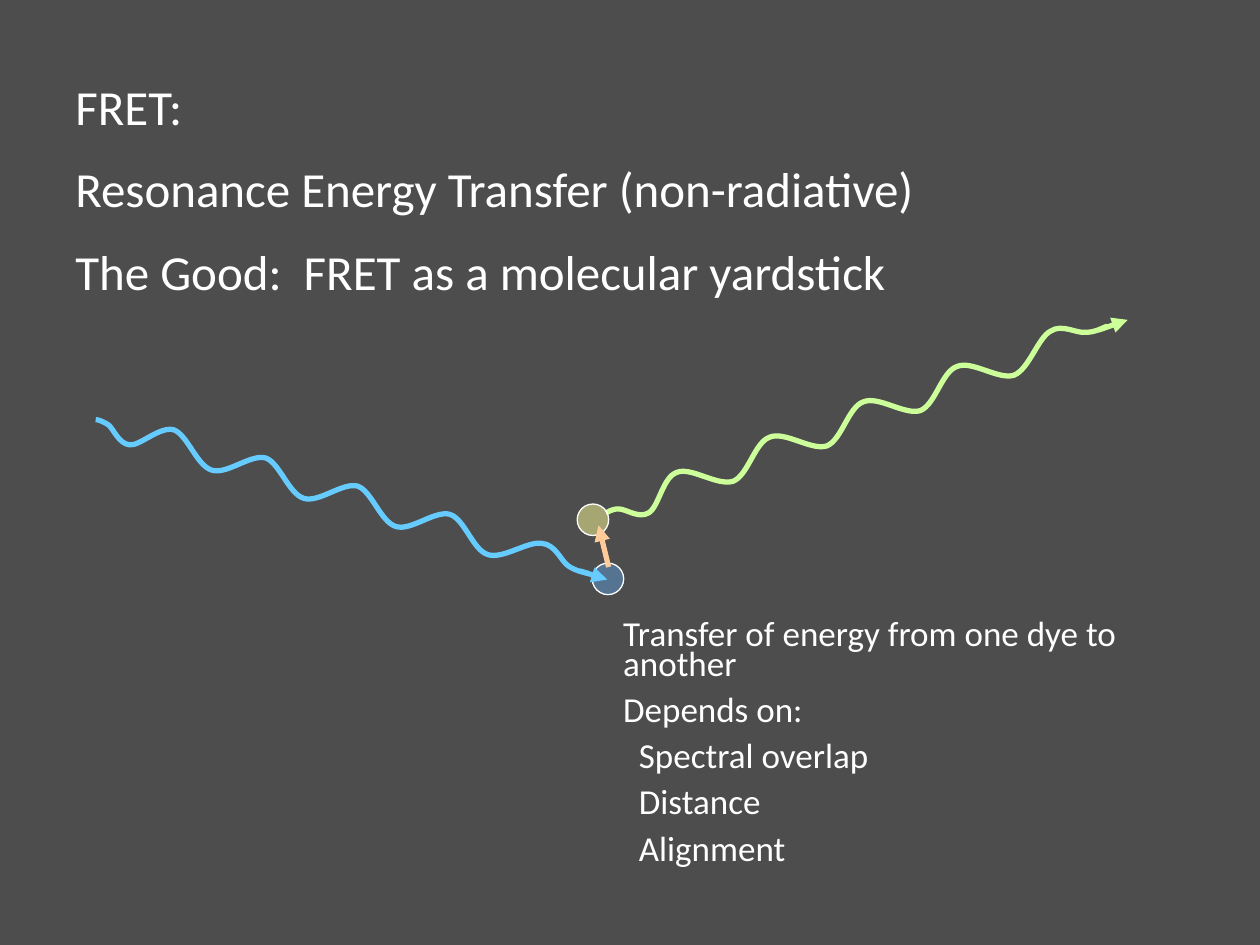
from lxml.etree import SubElement
from pptx import Presentation
from pptx.dml.color import RGBColor
from pptx.enum.shapes import MSO_CONNECTOR, MSO_SHAPE
from pptx.enum.text import MSO_ANCHOR
from pptx.oxml.ns import qn
from pptx.util import Pt

WHITE = "FFFFFF"
BLUE = "66CCFF"
GREEN = "CCFF99"

# Each wave is a chain of cubic curves, three points to a curve.
# Lead points count from the wave's start, the others from the end of the part before.
BLUE_WAVE = {
    "lead": [(1.4, 0), (3.6, 0.7), (7.2, 2.9), (10.1, 5), (13, 13.7), (19.4, 14.4),
             (25.2, 15.1), (36.7, 3.6), (44.6, 5.8)],
    "period": [(7.9, 2.9), (13, 20.2), (21.6, 23), (30.2, 25.9), (43.9, 13.7), (52.6, 16.1)],
    "end": [(8.6, 2.9), (13, 20.2), (21.6, 23), (30.2, 25.9), (44.6, 15.1), (52.6, 16.6),
            (60.5, 17.3), (63.4, 26.6), (67.7, 29.5), (72, 32.4), (76.3, 33.1), (79.2, 33.8)],
    "arrow": [(276.5, 86.4), (292.3, 91.4)],
}
GREEN_WAVE = {
    "lead": [(0.7, 0), (2.9, -2.2), (7.2, -2.2), (11.5, -2.2), (18.7, 3.6), (24.5, 0),
             (30.2, -3.6), (32.4, -20.2), (40.3, -23), (48.2, -26.6), (63.4, -15.1), (72.7, -18)],
    "period": [(8.6, -3.6), (12.2, -22.3), (20.9, -25.2), (29.5, -28.8), (44.6, -17.3),
               (53.5, -20.2)],
    "end": [(8.6, -3.6), (13.7, -21.6), (20.9, -25.2), (27.4, -29.5), (35.3, -23.8), (41, -24.5),
            (46.8, -24.5), (51.1, -27.4), (53.3, -28.1)],
    "arrow": [(281.5, -104.4), (298.1, -110.2)],
}


def color(hex_string):
    return RGBColor.from_string(hex_string)


def add_text(slide, box, lines, size, space_before, line_spacing=None):
    """Write (text, indent) pairs as the paragraphs of one text box."""
    frame = slide.shapes.add_textbox(*map(Pt, box)).text_frame
    frame.word_wrap = True
    frame.vertical_anchor = MSO_ANCHOR.MIDDLE
    for index, (text, indent) in enumerate(lines):
        paragraph = frame.paragraphs[0] if index == 0 else frame.add_paragraph()
        paragraph.space_before = Pt(space_before)
        if line_spacing:
            paragraph.line_spacing = line_spacing
        if indent:
            paragraph._p.get_or_add_pPr().set("marL", str(Pt(indent)))
        run = paragraph.add_run()
        run.text = text
        run.font.name = "Calibri"
        run.font.size = Pt(size)
        run.font.color.rgb = color(WHITE)


def add_dye(slide, left, top, fill):
    dye = slide.shapes.add_shape(MSO_SHAPE.OVAL, Pt(left), Pt(top), Pt(18), Pt(18))
    dye.shadow.inherit = False
    dye.fill.solid()
    dye.fill.fore_color.rgb = color(fill)
    fill_color = dye._element.spPr.find(".//" + qn("a:srgbClr"))
    SubElement(fill_color, qn("a:alpha"), val="50000")
    dye.line.color.rgb = color(WHITE)
    dye.line.width = Pt(0.75)


def add_arrow(shapes, begin, end, line_color):
    arrow = shapes.add_connector(MSO_CONNECTOR.STRAIGHT, *map(Pt, (*begin, *end)))
    arrow.line.color.rgb = color(line_color)
    arrow.line.width = Pt(3)
    SubElement(arrow.line._get_or_add_ln(), qn("a:tailEnd"), type="triangle")
    SubElement(arrow._element.spPr, qn("a:effectLst"))


def shift(points, origin):
    return [(origin[0] + x, origin[1] + y) for x, y in points]


def add_curve(shapes, start, points, line_color):
    """Draw a chain of cubic curves: build straight segments, then join them in threes."""
    builder = shapes.build_freeform(Pt(start[0]), Pt(start[1]))
    builder.add_line_segments([(Pt(x), Pt(y)) for x, y in points], close=False)
    curve = builder.convert_to_shape()
    curve.shadow.inherit = False
    curve.fill.background()
    curve.line.color.rgb = color(line_color)
    curve.line.width = Pt(3)
    outline = curve._element.find(".//" + qn("a:path"))
    segments = outline.findall(qn("a:lnTo"))
    for first in range(0, len(segments), 3):
        bezier = SubElement(outline, qn("a:cubicBezTo"))
        for segment in segments[first:first + 3]:
            bezier.append(segment[0])
            outline.remove(segment)


def add_light_wave(slide, start, wave, line_color):
    shapes = slide.shapes.add_group_shape().shapes
    points = shift(wave["lead"], start)
    for part in [wave["period"]] * 3 + [wave["end"]]:
        points += shift(part, points[-1])
    add_curve(shapes, start, points, line_color)
    add_arrow(shapes, *shift(wave["arrow"], start), line_color)


def main():
    presentation = Presentation()
    presentation.slide_width = Pt(720)
    presentation.slide_height = Pt(540)
    slide = presentation.slides.add_slide(presentation.slide_layouts[6])
    slide.background.fill.solid()
    slide.background.fill.fore_color.rgb = color("4D4D4D")

    add_dye(slide, 338.4, 321.8, "5B9BD5")
    add_text(slide, (36, 36, 594, 143.3), [
        ("FRET:", 0),
        ("Resonance Energy Transfer (non-radiative)", 0),
        ("The Good:  FRET as a molecular yardstick", 0),
    ], size=28, space_before=13.5)
    add_light_wave(slide, (54.7, 239.8), BLUE_WAVE, BLUE)
    add_light_wave(slide, (346.3, 293), GREEN_WAVE, GREEN)
    add_text(slide, (349, 347, 341.3, 157.7), [
        ("Transfer of energy from one dye to another", 0),
        ("Depends on:", 0),
        ("Spectral overlap", 9),
        ("Distance", 9),
        ("Alignment", 9),
    ], size=20, space_before=9.6, line_spacing=0.7)
    add_dye(slide, 329.8, 288, "FFFF99")
    add_arrow(slide.shapes, (347.8, 324), (342, 300.2), "FFCC99")

    presentation.save("out.pptx")


if __name__ == "__main__":
    main()
